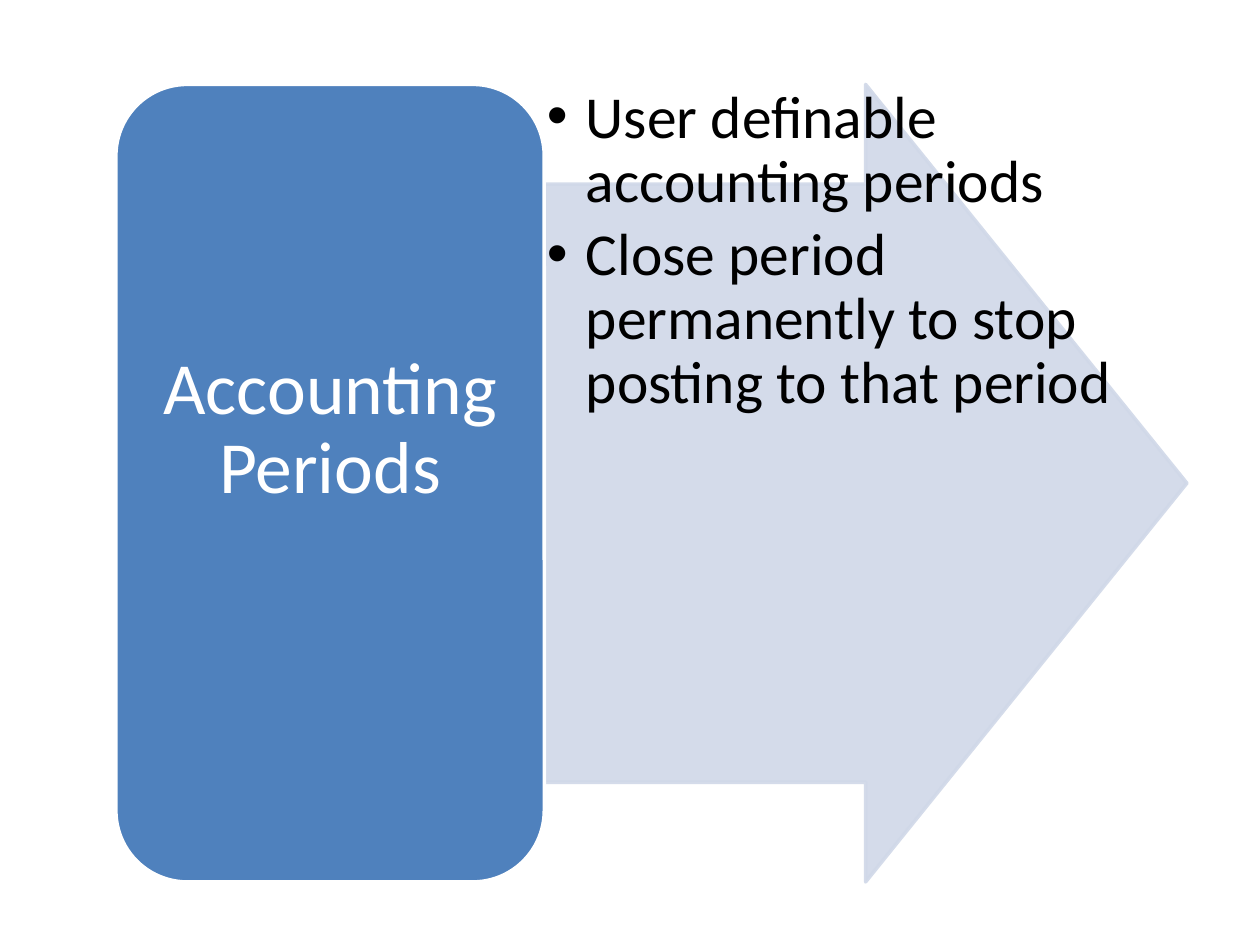
"""Build a slide where an accounting periods block points to its features."""
from lxml import etree
from pptx import Presentation
from pptx.dml.color import RGBColor
from pptx.enum import shapes, text
from pptx.oxml import ns
from pptx.util import Inches, Pt

COLOURS = {"block": "4F81BD", "arrow": "D0D8E8", "white": "FFFFFF", "black": "000000"}
TOP, HEIGHT = 0.67, 6.33
BLOCK_AREA = (0.92, TOP, 3.4, HEIGHT)
ARROW_AREA = (4.32, TOP, 5.1, HEIGHT)


def paint(fill, colour, opacity):
    """Give a fill a solid colour and an opacity in percent."""
    fill.solid()
    fill.fore_color.rgb = RGBColor.from_string(COLOURS[colour])
    if opacity < 100:
        tone = fill._xPr.find(ns.qn("a:solidFill"))[0]
        etree.SubElement(tone, ns.qn("a:alpha"), val=str(opacity * 1000))


def add_panel(group, kind, area, fill, line, opacity=100, adjustments=()):
    """Add a filled preset shape with a 2 pt outline."""
    panel = group.shapes.add_shape(kind, *map(Inches, area))
    panel.shadow.inherit = False
    for index, value in enumerate(adjustments):
        panel.adjustments[index] = value
    paint(panel.fill, fill, opacity)
    paint(panel.line.fill, line, opacity)
    panel.line.width = Pt(2)


def add_bullet(para, indent):
    """Give a paragraph a round bullet with a hanging indent."""
    properties = para._p.get_or_add_pPr()
    properties.set("marL", str(Inches(indent)))
    properties.set("indent", str(-Inches(indent)))
    etree.SubElement(properties, ns.qn("a:buFont"), typeface="Arial")
    etree.SubElement(properties, ns.qn("a:buChar"), char="•")


def add_text(group, area, lines, size, colour, insets, anchor, align, bullets=False):
    """Add a wrapping text box with one paragraph per line."""
    box = group.shapes.add_textbox(*map(Inches, area))
    frame = box.text_frame
    frame.word_wrap = True
    frame.vertical_anchor = anchor
    (frame.margin_left, frame.margin_top,
     frame.margin_right, frame.margin_bottom) = map(Inches, insets)
    for index, line in enumerate(lines):
        para = frame.paragraphs[0] if index == 0 else frame.add_paragraph()
        para.text = line
        para.alignment = align
        para.line_spacing = 0.9
        if bullets:
            para.level = 1
            para.space_after = Pt(5)
            add_bullet(para, 0.31)
        para.font.name = "Calibri"
        para.font.size = Pt(size)
        para.font.color.rgb = RGBColor.from_string(COLOURS[colour])


def main():
    """Build and save the slide."""
    deck = Presentation()
    deck.slide_width, deck.slide_height = Inches(10), Inches(7.5)
    page = deck.slides.add_slide(deck.slide_layouts[6])
    group = page.shapes.add_group_shape()
    add_panel(group, shapes.MSO_SHAPE.RIGHT_ARROW, ARROW_AREA, "arrow", "arrow",
              opacity=90, adjustments=(0.75, 0.5))
    add_text(group, ARROW_AREA,
             ["User definable accounting periods",
              "Close period permanently to stop posting to that period"],
             34, "black", (0.02, 0.02, 0.02, 0.02),
             text.MSO_ANCHOR.TOP, text.PP_ALIGN.LEFT, bullets=True)
    add_panel(group, shapes.MSO_SHAPE.ROUNDED_RECTANGLE, BLOCK_AREA, "block", "white")
    add_text(group, BLOCK_AREA, ["Accounting Periods"], 42, "white",
             (0.17, 0.09, 0.17, 0.93), text.MSO_ANCHOR.MIDDLE, text.PP_ALIGN.CENTER)
    deck.save("out.pptx")


if __name__ == "__main__":
    main()
